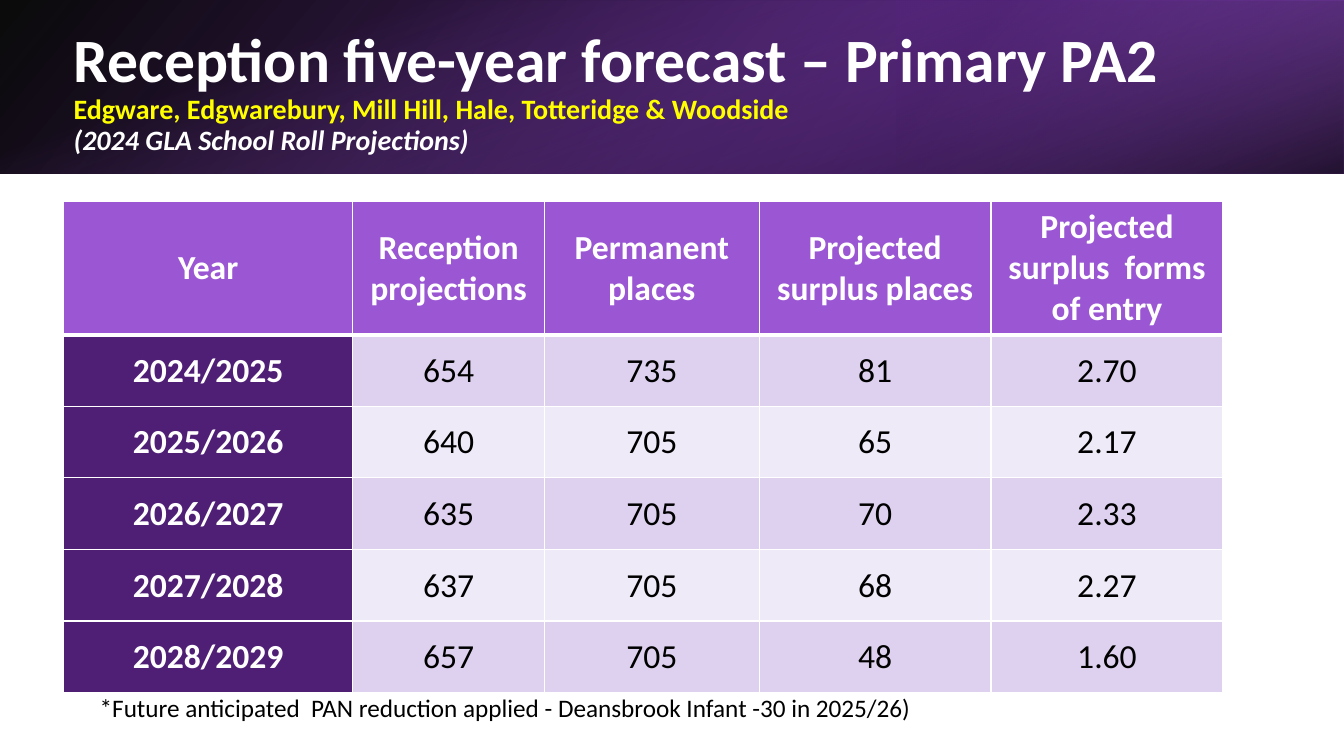
"""Build the Primary PA2 reception forecast slide."""
from lxml import etree
from pptx import Presentation
from pptx.dml.color import RGBColor
from pptx.enum.shapes import MSO_SHAPE
from pptx.enum.text import MSO_ANCHOR, MSO_AUTO_SIZE, PP_ALIGN
from pptx.oxml.ns import qn
from pptx.util import Inches, Pt

RECTANGLE = MSO_SHAPE.RECTANGLE
MIDDLE = MSO_ANCHOR.MIDDLE
LEFT, CENTER = PP_ALIGN.LEFT, PP_ALIGN.CENTER
NO_FIT = MSO_AUTO_SIZE.NONE
FONT = "Calibri"
WHITE, BLACK, YELLOW = "FFFFFF", "000000", "FFFF00"
PURPLE, DARK = "9B57D3", "4F1F76"
BANDS = ("DED1EF", "EFEAF7")

TITLE = [
    ("Reception five-year forecast – Primary PA2", 44, WHITE, False),
    ("Edgware, Edgwarebury, Mill Hill, Hale, Totteridge & Woodside", 20, YELLOW, False),
    ("(2024 GLA School Roll Projections)", 20, WHITE, True),
]
ROWS = [
    ("Year", "Reception projections", "Permanent places",
     "Projected surplus places", "Projected surplus  forms of entry"),
    ("2024/2025", "654", "735", "81", "2.70"),
    ("2025/2026", "640", "705", "65", "2.17"),
    ("2026/2027", "635", "705", "70", "2.33"),
    ("2027/2028", "637", "705", "68", "2.27"),
    ("2028/2029", "657", "705", "48", "1.60"),
]
NOTE = "*Future anticipated  PAN reduction applied - Deansbrook Infant -30 in 2025/26)"
COLUMN_WIDTHS = (2.87, 1.9, 2.13, 2.3, 2.3)
HEADER_HEIGHT, ROW_HEIGHT = 1.19, 0.71
# box, rotation, flipped, angle, stops of (position, colour, opacity)
BANNER = [
    ((0, 0, 13.33, 1.72), 0, True, 140, ((0, BLACK, 96), (100, "762EB1", 100))),
    ((8.89, 0, 4.44, 1.72), 180, True, 320, ((19, DARK, 68), (100, PURPLE, 79))),
    ((5.8, -5.8, 1.72, 13.33), 90, False, 340, ((23, PURPLE, 0), (99, BLACK, 74))),
]


def color(value):
    return RGBColor.from_string(value)


def inches(lengths):
    return [Inches(length) for length in lengths]


def style(span, size, value, bold=False, italic=False):
    span.font.name, span.font.size = FONT, Pt(size)
    span.font.color.rgb = color(value)
    span.font.bold, span.font.italic = bold, italic


def add_banner(page):
    for box, rotation, flipped, angle, stops in BANNER:
        layer = page.shapes.add_shape(RECTANGLE, *inches(box))
        layer.shadow.inherit = False
        layer.line.fill.background()
        layer.rotation = rotation
        if flipped:
            layer._element.spPr.find(qn("a:xfrm")).set("flipH", "1")
        layer.fill.gradient()
        layer.fill.gradient_angle = 360 - angle
        for stop, (position, value, _) in zip(layer.fill.gradient_stops, stops):
            stop.position = position / 100
            stop.color.rgb = color(value)
        shades = layer._element.spPr.iter(qn("a:srgbClr"))
        for shade, (_, _, opacity) in zip(shades, stops):
            etree.SubElement(shade, qn("a:alpha")).set("val", str(opacity * 1000))


def add_title(page):
    title = page.shapes.title
    title.left, title.top, title.width, title.height = inches((0.63, 0.21, 12.5, 1.42))
    frame = title.text_frame
    frame.text = "\v".join(line[0] for line in TITLE)
    frame.auto_size, frame.vertical_anchor = NO_FIT, MIDDLE
    para = frame.paragraphs[0]
    para.alignment, para.line_spacing = LEFT, 0.9
    for span, (_, size, value, italic) in zip(para.runs, TITLE):
        style(span, size, value, True, italic)
    for line_break, line in zip(para._p.findall(qn("a:br")), TITLE):
        etree.SubElement(line_break, qn("a:rPr")).set("sz", str(line[1] * 100))
    page.shapes._spTree.append(title._element)


def set_borders(cell, top, bottom):
    properties = cell._tc.get_or_add_tcPr()
    sides = (("lnL", 1), ("lnR", 1), ("lnT", top), ("lnB", bottom))
    for place, (side, width) in enumerate(sides):
        line = etree.Element(qn(f"a:{side}"), w=str(Pt(width)))
        fill = etree.SubElement(line, qn("a:solidFill"))
        etree.SubElement(fill, qn("a:srgbClr")).set("val", WHITE)
        properties.insert(place, line)


def add_forecast(page):
    heights = [HEADER_HEIGHT] + [ROW_HEIGHT] * (len(ROWS) - 1)
    box = inches((0.63, 2, sum(COLUMN_WIDTHS), sum(heights)))
    table = page.shapes.add_table(len(ROWS), len(COLUMN_WIDTHS), *box).table
    for column, width in zip(table.columns, COLUMN_WIDTHS):
        column.width = Inches(width)
    for r, values in enumerate(ROWS):
        table.rows[r].height = Inches(heights[r])
        for c, value in enumerate(values):
            cell = table.cell(r, c)
            heading = r == 0 or c == 0
            cell.text_frame.text = value
            cell.vertical_anchor = MIDDLE
            para = cell.text_frame.paragraphs[0]
            para.alignment = CENTER
            style(para.runs[0], 24, WHITE if heading else BLACK, heading)
            if r:
                cell.margin_left = cell.margin_right = cell.margin_top = Inches(0.01)
                cell.margin_bottom = 0
            cell.fill.solid()
            shade = PURPLE if r == 0 else DARK if c == 0 else BANDS[(r - 1) % 2]
            cell.fill.fore_color.rgb = color(shade)
            set_borders(cell, 3 if r == 1 else 1, 3 if r == 0 else 1)


def add_note(page):
    frame = page.shapes.add_textbox(*inches((0.89, 6.82, 11.23, 0.4))).text_frame
    frame.word_wrap = True
    frame.text = NOTE
    style(frame.paragraphs[0].runs[0], 18, BLACK)


def main():
    deck = Presentation()
    deck.slide_width, deck.slide_height = inches((13.33, 7.5))
    page = deck.slides.add_slide(deck.slide_layouts[5])
    add_banner(page)
    add_title(page)
    add_forecast(page)
    add_note(page)
    deck.save("out.pptx")


if __name__ == "__main__":
    main()
